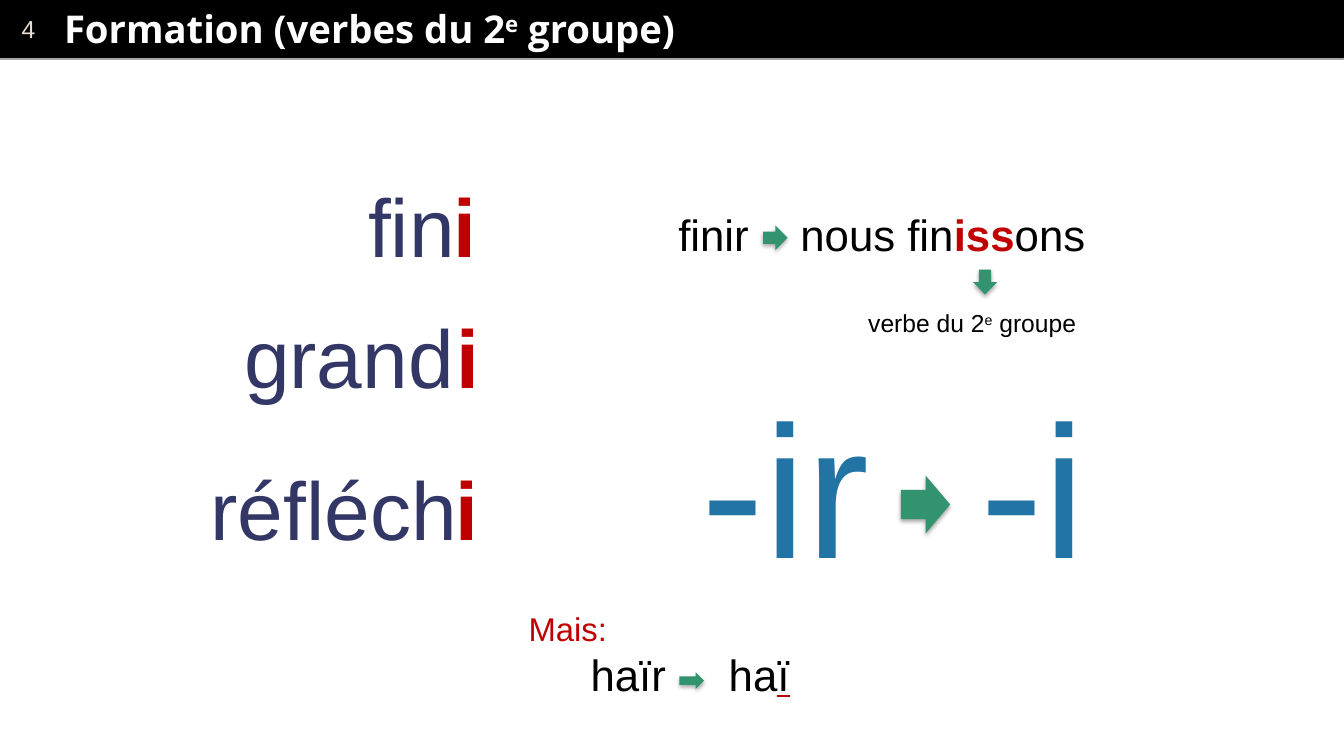
from lxml.etree import SubElement
from pptx import Presentation
from pptx.dml.color import RGBColor
from pptx.enum.shapes import MSO_CONNECTOR, MSO_SHAPE
from pptx.enum.text import MSO_ANCHOR, PP_ALIGN
from pptx.oxml import parse_xml
from pptx.oxml.ns import qn
from pptx.util import Inches, Pt

COLORS = {
    "black": "000000",
    "white": "FFFFFF",
    "rule": "A6A6A6",
    "number": "E7DED1",
    "stem": "333766",
    "red": "C00000",
    "blue": "2274A5",
    "green": "32936F",
}
NS = 'xmlns:a="http://schemas.openxmlformats.org/drawingml/2006/main"'
SHADOW = (
    f'<a:effectLst {NS}><a:outerShdw blurRad="40000" dist="23000" dir="5400000" '
    'rotWithShape="0"><a:srgbClr val="000000"><a:alpha val="35000"/></a:srgbClr>'
    "</a:outerShdw></a:effectLst>"
)

prs = Presentation()
prs.slide_width = Inches(13.65)
prs.slide_height = Inches(7.68)
slide = prs.slides.add_slide(prs.slide_layouts[6])
shapes = slide.shapes


def add_run(paragraph, text, size, color, bold=False, font="Arial", raised=False):
    run = paragraph.add_run()
    run.text = text
    run.font.size = Pt(size)
    run.font.bold = bold
    run.font.name = font
    run.font.color.rgb = RGBColor.from_string(COLORS[color])
    if raised:
        run.font._element.set("baseline", "30000")
    return run


def add_text(left, top, width, height, wrap=False):
    box = shapes.add_textbox(Inches(left), Inches(top), Inches(width), Inches(height))
    box.text_frame.word_wrap = wrap
    return box.text_frame


header = shapes.add_shape(MSO_SHAPE.RECTANGLE, 0, 0, prs.slide_width, Inches(0.58))
header.shadow.inherit = False
header.fill.solid()
header.fill.fore_color.rgb = RGBColor.from_string(COLORS["black"])
header.line.color.rgb = RGBColor.from_string(COLORS["black"])
header.line.width = Pt(0.75)
header.text_frame.vertical_anchor = MSO_ANCHOR.MIDDLE
page_number = header.text_frame.paragraphs[0]
page_number.alignment = PP_ALIGN.LEFT
page_number._p.get_or_add_pPr().set("marL", str(Inches(0.12)))
add_run(page_number, "4", 18, "number")

header_rule = shapes.add_connector(
    MSO_CONNECTOR.STRAIGHT, 0, Inches(0.6), prs.slide_width, Inches(0.6)
)
header_rule.line.color.rgb = RGBColor.from_string(COLORS["rule"])
header_rule.line.width = Pt(2)
SubElement(header_rule._element.spPr, qn("a:effectLst"))

title = add_text(0.61, 0.01, 12.85, 0.56, wrap=True)
title.vertical_anchor = MSO_ANCHOR.MIDDLE
title.margin_left = title.margin_right = Inches(0.04)
title.margin_top = title.margin_bottom = Inches(0.04)
for text, raised in [("Formation (verbes du 2", False), ("e", True), (" groupe)", False)]:
    add_run(title.paragraphs[0], text, 28, "white", True, "Open Sans", raised)

for stem, stem_left, stem_width, ending_left, top in [
    ("fin", 3.64, 1.32, 4.51, 1.73),
    ("grand", 2.38, 2.59, 4.54, 3.06),
    ("réfléch", 2.04, 2.73, 4.53, 4.61),
]:
    ending = add_text(ending_left, top, 0.91, 1.11, wrap=True)
    add_run(ending.paragraphs[0], "i", 60, "red", True)
    stem_text = add_text(stem_left, top, stem_width, 1.11)
    add_run(stem_text.paragraphs[0], stem, 60, "stem")

for suffix, left, width in [("-ir", 7.02, 1.92), ("-i", 9.85, 1.28)]:
    suffix_text = add_text(left, 3.71, width, 2.42)
    suffix_text.paragraphs[0].alignment = PP_ALIGN.CENTER
    add_run(suffix_text.paragraphs[0], suffix, 138, "blue")

example = add_text(6.79, 2.06, 4.38, 0.64, wrap=True).paragraphs[0]
exception = add_text(4.9, 6.13, 3.6, 1.04, wrap=True)
but_line = exception.paragraphs[0]
but_line._p.get_or_add_pPr().set("marL", str(Inches(0.37)))
hair_line = exception.add_paragraph()
hair_line._p.get_or_add_pPr().set("marL", str(Inches(1)))
for paragraph, stop in [(example, 1.24), (hair_line, 2.25)]:
    tabs = SubElement(paragraph._p.get_or_add_pPr(), qn("a:tabLst"))
    SubElement(tabs, qn("a:tab"), pos=str(Inches(stop)), algn="l")

add_run(example, "finir\tnous fin", 32, "black")
add_run(example, "iss", 32, "red", True)
add_run(example, "ons", 32, "black")

add_run(but_line, "Mais:", 24, "red")
add_run(hair_line, "haïr\tha", 32, "black")
last_letter = add_run(hair_line, "ï", 32, "black")
last_letter.font.underline = True
last_letter.font._element.find(qn("a:solidFill")).addnext(
    parse_xml(
        f'<a:uFill {NS}><a:solidFill><a:srgbClr val="{COLORS["red"]}"/>'
        "</a:solidFill></a:uFill>"
    )
)

group_note = add_text(8.72, 3.08, 2.34, 0.4)
for text, raised in [("verbe du 2", False), ("e", True), (" groupe", False)]:
    add_run(group_note.paragraphs[0], text, 18, "black", raised=raised)

for direction, left, top, width, height in [
    (MSO_SHAPE.RIGHT_ARROW, 9.15, 4.83, 0.5, 0.59),
    (MSO_SHAPE.RIGHT_ARROW, 6.9, 6.83, 0.25, 0.17),
    (MSO_SHAPE.RIGHT_ARROW, 7.75, 2.29, 0.25, 0.25),
    (MSO_SHAPE.DOWN_ARROW, 9.88, 2.74, 0.25, 0.25),
]:
    arrow = shapes.add_shape(
        direction, Inches(left), Inches(top), Inches(width), Inches(height)
    )
    arrow.fill.solid()
    arrow.fill.fore_color.rgb = RGBColor.from_string(COLORS["green"])
    arrow.line.fill.background()
    arrow._element.spPr.append(parse_xml(SHADOW))

prs.save("out.pptx")
